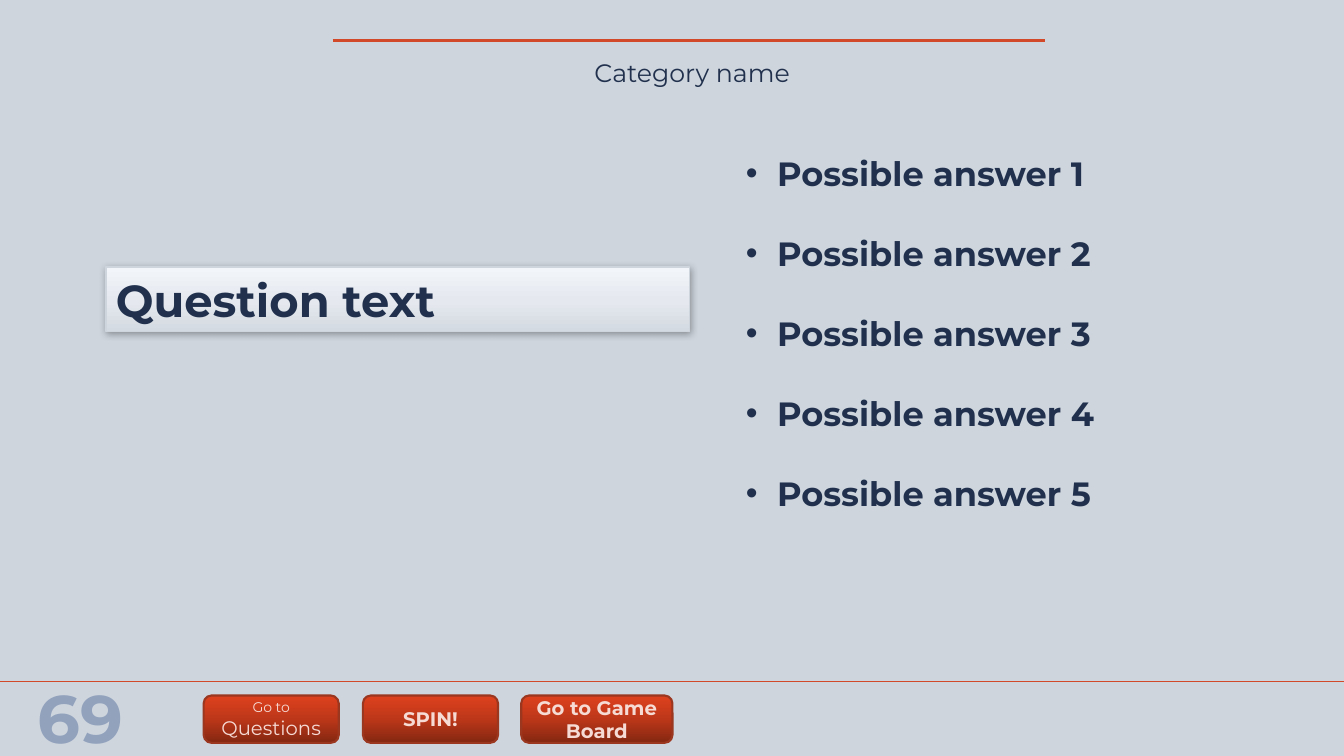
from pptx import Presentation
from pptx.dml.color import RGBColor
from pptx.enum.shapes import MSO_CONNECTOR as CONN, MSO_SHAPE as SHAPE
from pptx.enum.text import MSO_ANCHOR as ANCHOR, PP_ALIGN as ALIGN
from pptx.oxml.ns import qn
from pptx.util import Inches, Pt
from lxml.etree import SubElement

NAVY, RED, PALE, GREY = "21314D", "D2492A", "F6DAD4", "CED5DD"
BUTTON_STOPS = [(0, "842711"), (50, "BC3719"), (100, "DF411D")]
PANEL_STOPS = [(0, "D4DAE1"), (48, "E5E9EF"), (100, "F2F6FA")]


def write(p, text, size, color=NAVY, bold=False, align=ALIGN.LEFT):
    p.alignment = align
    r = p.add_run()
    r.text = text
    r.font.name, r.font.size, r.font.bold = "Montserrat", Pt(size), bold
    r.font.color.rgb = RGBColor.from_string(color)


def add_panel(kind, x, y, w, h, stops, line, width):
    sp = s.shapes.add_shape(kind, Inches(x), Inches(y), Inches(w), Inches(h))
    sp.shadow.inherit = False
    sp.line.color.rgb = RGBColor.from_string(line)
    sp.line.width = Pt(width)
    sp.fill.gradient()
    sp.fill.gradient_angle = 90
    gs_list = sp._element.spPr.find(".//" + qn("a:gsLst"))
    gs_list.clear()
    for pos, color in stops:
        gs = SubElement(gs_list, qn("a:gs"), pos=str(pos * 1000))
        SubElement(gs, qn("a:srgbClr"), val=color)
    sp.text_frame.word_wrap = True
    sp.text_frame.vertical_anchor = ANCHOR.MIDDLE
    return sp


prs = Presentation()
prs.slide_width, prs.slide_height = Inches(13.33), Inches(7.5)
s = prs.slides.add_slide(prs.slide_layouts[5])
s.background.fill.solid()
s.background.fill.fore_color.rgb = RGBColor.from_string(GREY)

# Rules above the category and above the footer
for x1, x2, y, width in [(0, 13.33, 6.76, 1), (3.3, 10.36, 0.4, 2)]:
    rule = s.shapes.add_connector(CONN.STRAIGHT, Inches(x1), Inches(y), Inches(x2), Inches(y))
    rule.line.color.rgb = RGBColor.from_string(RED)
    rule.line.width = Pt(width)
    SubElement(rule._element.spPr, qn("a:effectLst"))

# Category title
title = s.shapes.title
title.left, title.top, title.width, title.height = map(Inches, (3.36, 0.52, 7.01, 0.4))
title.text_frame.vertical_anchor = ANCHOR.TOP
write(title.text_frame.paragraphs[0], "Category name", 18, align=ALIGN.CENTER)

# Question panel with a soft shadow
question = add_panel(SHAPE.RECTANGLE, 1.05, 2.65, 5.79, 0.64, PANEL_STOPS, GREY, 1)
write(question.text_frame.paragraphs[0], "Question text", 32, bold=True)
effects = question._element.spPr.find(qn("a:effectLst"))
shadow = SubElement(effects, qn("a:outerShdw"), blurRad=str(Pt(5)), dist=str(Pt(1)),
                    dir="5400000", algn="ctr", rotWithShape="0")
black = SubElement(shadow, qn("a:srgbClr"), val="000000")
SubElement(black, qn("a:alpha"), val="32000")

# Bulleted answers
tf = s.shapes.add_textbox(Inches(7.3), Inches(1.47), Inches(5.51), Inches(3.74)).text_frame
tf.word_wrap = True
for i in range(5):
    p = tf.add_paragraph() if i else tf.paragraphs[0]
    if i:
        p.space_before = Pt(28.3)
    pPr = p._p.get_or_add_pPr()
    pPr.set("marL", str(Inches(0.31)))
    pPr.set("indent", str(-Inches(0.31)))
    SubElement(pPr, qn("a:buFont"), typeface="Arial")
    SubElement(pPr, qn("a:buChar"), char="•")
    write(p, f"Possible answer {i + 1}", 24, bold=True)

# Slide number
tf = s.shapes.add_textbox(Inches(0.21), Inches(6.66), Inches(1.18), Inches(0.91)).text_frame
tf.word_wrap = True
write(tf.paragraphs[0], "69", 48, "92A2BD", True, ALIGN.CENTER)

# Footer buttons: left, width, runs of (text, size, bold)
buttons = [
    (2.02, 1.34, [("Go to\v", 10, False), ("Questions", 14, False)]),
    (3.6, 1.34, [("SPIN!", 14, True)]),
    (5.17, 1.5, [("Go to Game Board", 14, True)]),
]
for x, w, runs in buttons:
    sp = add_panel(SHAPE.ROUNDED_RECTANGLE, x, 6.9, w, 0.47, BUTTON_STOPS, "9B361F", 1.5)
    p = sp.text_frame.paragraphs[0]
    for text, size, bold in runs:
        write(p, text.rstrip("\v"), size, PALE, bold, ALIGN.CENTER)
        if text.endswith("\v"):
            p.add_line_break()

prs.save("out.pptx")
